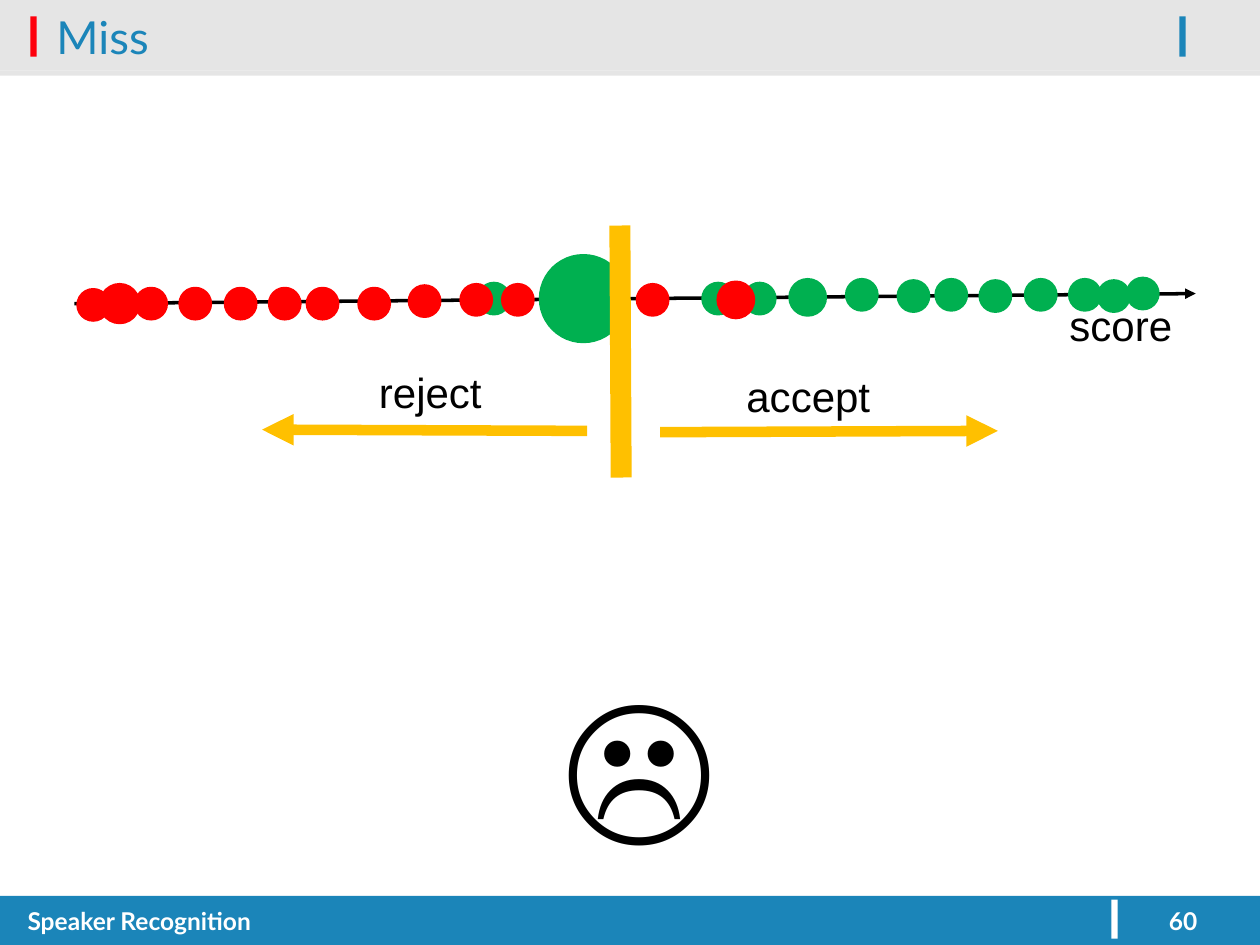
from dataclasses import dataclass

from lxml.etree import SubElement
from pptx import Presentation
from pptx.dml.color import RGBColor
from pptx.enum.shapes import MSO_CONNECTOR, MSO_SHAPE
from pptx.enum.text import MSO_ANCHOR, PP_ALIGN
from pptx.oxml.ns import qn
from pptx.util import Inches, Pt


@dataclass(frozen=True)
class Theme:
    blue: str = "1B85B9"
    gray: str = "E5E5E5"
    white: str = "FFFFFF"
    black: str = "000000"
    accent_red: str = "FE000C"
    red: str = "FF0000"
    green: str = "00B050"
    amber: str = "FFC000"
    heading_font: str = "Lato"
    label_font: str = "Arial"
    title_size: int = 26
    label_size: int = 24
    footer_size: int = 14
    face_size: int = 96


theme = Theme()
presentation = Presentation()
presentation.slide_width = Inches(10)
presentation.slide_height = Inches(7.5)
slide = presentation.slides.add_slide(presentation.slide_layouts[6])


def add_filled_shape(kind, left, top, width, height, color, outline=0):
    shape = slide.shapes.add_shape(
        kind, Inches(left), Inches(top), Inches(width), Inches(height))
    shape.shadow.inherit = False
    shape.fill.solid()
    shape.fill.fore_color.rgb = RGBColor.from_string(color)
    if outline:
        shape.line.color.rgb = RGBColor.from_string(color)
        shape.line.width = Pt(outline)
    else:
        shape.line.fill.background()


def add_line(start, end, color, width, arrow):
    line = slide.shapes.add_connector(
        MSO_CONNECTOR.STRAIGHT, *(Inches(value) for value in (*start, *end)))
    line.line.color.rgb = RGBColor.from_string(color)
    line.line.width = Pt(width)
    if arrow:
        SubElement(line.line._get_or_add_ln(), qn("a:tailEnd"), type="triangle")
    SubElement(line._element.spPr, qn("a:effectLst"))


# Header and footer bands with their upright marks
for left, top, width, height, color in (
    (0, 0.56, 10, 0.04, theme.gray),
    (0, 7.11, 10, 0.39, theme.blue),
    (0, 0, 10, 0.56, theme.gray),
    (0.24, 0.13, 0.05, 0.32, theme.accent_red),
    (9.36, 0.13, 0.05, 0.32, theme.blue),
    (8.82, 7.14, 0.05, 0.31, theme.white),
):
    add_filled_shape(MSO_SHAPE.RECTANGLE, left, top, width, height, color)

# Score axis
add_line((0.59, 2.41), (9.49, 2.33), theme.black, 2, arrow=True)

# Trials on the axis: left, top, diameter, from back to front
small = 0.24
target_trials = (
    (8.95, 2.21, small), (8.72, 2.23, small), (8.49, 2.22, small),
    (8.14, 2.22, small), (7.78, 2.23, small), (7.43, 2.22, small),
    (7.13, 2.23, small), (3.8, 2.25, small), (4.29, 2.03, 0.68),
    (6.72, 2.22, small), (5.58, 2.25, small), (5.91, 2.25, small),
    (6.27, 2.22, 0.28),
)
impostor_trials = (
    (0.62, 2.3, small), (0.8, 2.26, 0.3), (1.08, 2.29, small),
    (1.43, 2.29, small), (1.79, 2.29, small), (2.14, 2.29, small),
    (2.44, 2.29, small), (5.7, 2.24, 0.28), (5.06, 2.26, small),
    (2.85, 2.29, small), (3.99, 2.26, small), (3.66, 2.26, small),
    (3.25, 2.27, small),
)
for trials, color in ((target_trials, theme.green), (impostor_trials, theme.red)):
    for left, top, diameter in trials:
        add_filled_shape(
            MSO_SHAPE.OVAL, left, top, diameter, diameter, color, outline=2)

# Decision threshold and the two decision directions
add_line((4.92, 1.79), (4.93, 3.79), theme.amber, 12, arrow=False)
add_line((5.24, 3.43), (7.92, 3.42), theme.amber, 6, arrow=True)
add_line((4.66, 3.42), (2.08, 3.41), theme.amber, 6, arrow=True)

# Texts
label = (theme.label_font, theme.label_size, theme.black, False, PP_ALIGN.CENTER)
footer = (theme.heading_font, theme.footer_size, theme.white, True)
title = (theme.heading_font, theme.title_size, theme.blue, False, PP_ALIGN.LEFT)
face = (theme.heading_font, theme.face_size, theme.black, False, PP_ALIGN.CENTER)
for text, left, top, width, height, style in (
    ("Miss", 0.35, -0.11, 8.9, 0.79, title),
    ("☹", 0.35, 5.15, 9.45, 1.7, face),
    ("Speaker Recognition", 0.12, 7.14, 8.58, 0.36, (*footer, PP_ALIGN.LEFT)),
    ("60", 8.94, 7.14, 0.9, 0.36, (*footer, PP_ALIGN.CENTER)),
    ("score", 8.07, 2.33, 1.65, 0.5, label),
    ("accept", 5.59, 2.89, 1.65, 0.5, label),
    ("reject", 2.59, 2.86, 1.65, 0.5, label),
):
    font_name, size, color, bold, alignment = style
    text_box = slide.shapes.add_textbox(
        Inches(left), Inches(top), Inches(width), Inches(height))
    frame = text_box.text_frame
    frame.word_wrap = True
    frame.vertical_anchor = MSO_ANCHOR.MIDDLE if style == title else MSO_ANCHOR.TOP
    paragraph = frame.paragraphs[0]
    paragraph.text = text
    paragraph.alignment = alignment
    paragraph.font.name = font_name
    paragraph.font.size = Pt(size)
    paragraph.font.bold = bold
    paragraph.font.color.rgb = RGBColor.from_string(color)

presentation.save("out.pptx")
